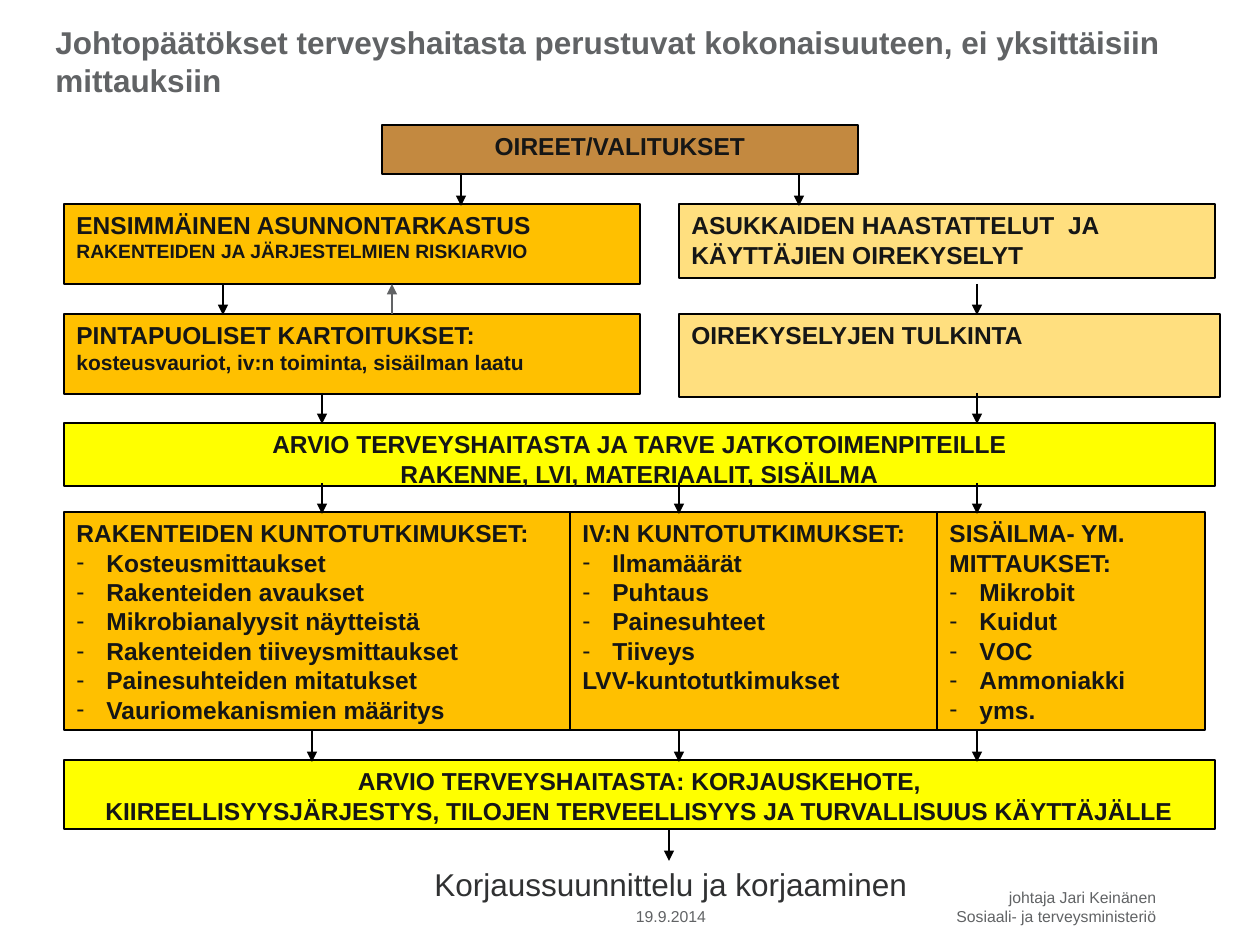
from lxml.etree import SubElement
from pptx import Presentation
from pptx.dml.color import RGBColor
from pptx.enum.shapes import MSO_CONNECTOR, MSO_SHAPE
from pptx.enum.text import MSO_ANCHOR, PP_ALIGN
from pptx.oxml.ns import qn
from pptx.util import Pt

SCALE = 914400 / 126
BLACK = RGBColor(0x00, 0x00, 0x00)
INK = RGBColor(0x15, 0x16, 0x16)
DARK = RGBColor(0x30, 0x31, 0x32)
GREY = RGBColor(0x61, 0x63, 0x65)
AMBER = RGBColor(0xFF, 0xC0, 0x00)
YELLOW = RGBColor(0xFF, 0xFF, 0x00)
BROWN = RGBColor(0xAF, 0x62, 0x00)
LEFT, MID, RIGHT = PP_ALIGN.LEFT, PP_ALIGN.CENTER, PP_ALIGN.RIGHT


def emu(*px):
    return [round(n * SCALE) for n in px]


class Chart:
    """Draws a flow chart on one slide in one style."""

    font = "Arial"
    stroke = Pt(0.75)

    def __init__(self, slide):
        self.slide = slide

    def para(self, frame, runs, align=LEFT, size=14, color=INK, bold=True, dash=False):
        """Add a paragraph; runs is a text or a list of (text, size)."""
        first = frame.paragraphs[0]
        para = frame.add_paragraph() if first.runs else first
        para.alignment = align
        if dash:
            props = para._p.get_or_add_pPr()
            indent = emu(30)[0]
            props.set("marL", str(indent))
            props.set("indent", str(-indent))
            SubElement(props, qn("a:buFont"), typeface=self.font)
            SubElement(props, qn("a:buChar"), char="-")
        for text, points in [(runs, size)] if isinstance(runs, str) else runs:
            run = para.add_run()
            run.text = text
            run.font.name = self.font
            run.font.size = Pt(points)
            run.font.bold = bold
            run.font.color.rgb = color
        return para

    def box(self, at, fill, lines, items=(), alpha=100, align=LEFT):
        """Draw a framed box with plain lines, then dashed items."""
        shape = self.slide.shapes.add_shape(MSO_SHAPE.RECTANGLE, *emu(*at))
        shape.shadow.inherit = False
        shape.fill.solid()
        shape.fill.fore_color.rgb = fill
        if alpha < 100:
            tint = shape._element.spPr.find(".//" + qn("a:srgbClr"))
            SubElement(tint, qn("a:alpha"), val=str(alpha * 1000))
        shape.line.color.rgb = BLACK
        shape.line.width = self.stroke
        frame = shape.text_frame
        frame.word_wrap = True
        frame.vertical_anchor = MSO_ANCHOR.TOP
        for line in lines:
            self.para(frame, line, align)
        for item in items:
            self.para(frame, item, dash=True)
        return frame

    def label(self, at, lines, size, color, bold=False, align=LEFT,
              anchor=MSO_ANCHOR.TOP, wrap=True, inset=True):
        frame = self.slide.shapes.add_textbox(*emu(*at)).text_frame
        frame.word_wrap = wrap
        frame.vertical_anchor = anchor
        if not inset:
            frame.margin_left = frame.margin_right = 0
            frame.margin_top = frame.margin_bottom = 0
        for line in lines:
            self.para(frame, line, align, size, color, bold)

    def arrow(self, x, top, end, color=BLACK):
        line = self.slide.shapes.add_connector(
            MSO_CONNECTOR.STRAIGHT, *emu(x, top, x, end))
        line.line.color.rgb = color
        line.line.width = self.stroke
        SubElement(line.line._get_or_add_ln(), qn("a:tailEnd"), type="triangle")
        SubElement(line._element.spPr, qn("a:effectLst"))


def main():
    deck = Presentation()
    deck.slide_width, deck.slide_height = emu(1260, 945)
    chart = Chart(deck.slides.add_slide(deck.slide_layouts[6]))

    chart.label((43, 16, 1196, 90),
                ["Johtopäätökset terveyshaitasta perustuvat kokonaisuuteen, "
                 "ei yksittäisiin mittauksiin"],
                18, GREY, bold=True, anchor=MSO_ANCHOR.MIDDLE)

    chart.box((382, 125, 476, 49), BROWN, ["OIREET/VALITUKSET"], alpha=75, align=MID)
    chart.box((64, 204, 576, 80), AMBER,
              [[("ENSIMMÄINEN ASUNNONTARKASTUS ", 14),
                ("RAKENTEIDEN JA JÄRJESTELMIEN RISKIARVIO", 11)]])
    chart.box((64, 314, 576, 80), AMBER,
              ["PINTAPUOLISET KARTOITUKSET:",
               [("kosteusvauriot, iv:n toiminta, sisäilman laatu", 12)]])
    chart.box((679, 204, 536, 74), AMBER,
              ["ASUKKAIDEN HAASTATTELUT  JA KÄYTTÄJIEN OIREKYSELYT"], alpha=50)
    chart.box((679, 314, 541, 83), AMBER, ["OIREKYSELYJEN TULKINTA"], alpha=50)
    chart.box((64, 423, 1151, 63), YELLOW,
              ["ARVIO TERVEYSHAITASTA JA TARVE JATKOTOIMENPITEILLE",
               "RAKENNE, LVI, MATERIAALIT, SISÄILMA"], align=MID)

    top, high = 512, 218
    chart.box((64, top, 506, high), AMBER, ["RAKENTEIDEN KUNTOTUTKIMUKSET:"],
              ["Kosteusmittaukset", "Rakenteiden avaukset",
               "Mikrobianalyysit näytteistä", "Rakenteiden tiiveysmittaukset",
               "Painesuhteiden mitatukset", "Vauriomekanismien määritys"])
    vent = chart.box((570, top, 367, high), AMBER, ["IV:N KUNTOTUTKIMUKSET:"],
                     ["Ilmamäärät", "Puhtaus", "Painesuhteet", "Tiiveys"])
    chart.para(vent, "LVV-kuntotutkimukset")
    chart.box((937, top, 268, high), AMBER, ["SISÄILMA- YM. MITTAUKSET:"],
              ["Mikrobit", "Kuidut", "VOC", "Ammoniakki", "yms."])

    chart.box((64, 760, 1151, 69), YELLOW,
              ["ARVIO TERVEYSHAITASTA: KORJAUSKEHOTE,",
               "KIIREELLISYYSJÄRJESTYS, TILOJEN TERVEELLISYYS JA "
               "TURVALLISUUS KÄYTTÄJÄLLE"], align=MID)

    rows = {175: (461, 799), 284: (223, 977), 393: (322, 977),
            483: (322, 679, 977), 731: (312, 679, 977), 830: (669,)}
    for start, stops in rows.items():
        for x in stops:
            chart.arrow(x, start, start + 31)
    chart.arrow(392, 314, 284, GREY)

    chart.label((422, 859, 503, 50), ["Korjaussuunnittelu ja korjaaminen"],
                18, DARK, wrap=False)
    foot = dict(size=9, color=GREY, anchor=MSO_ANCHOR.BOTTOM, inset=False)
    chart.label((636, 896, 100, 30), ["19.9.2014"], **foot)
    chart.label((946, 896, 210, 30),
                ["johtaja Jari Keinänen", "Sosiaali- ja terveysministeriö"],
                align=RIGHT, **foot)
    deck.save("out.pptx")


if __name__ == "__main__":
    main()
